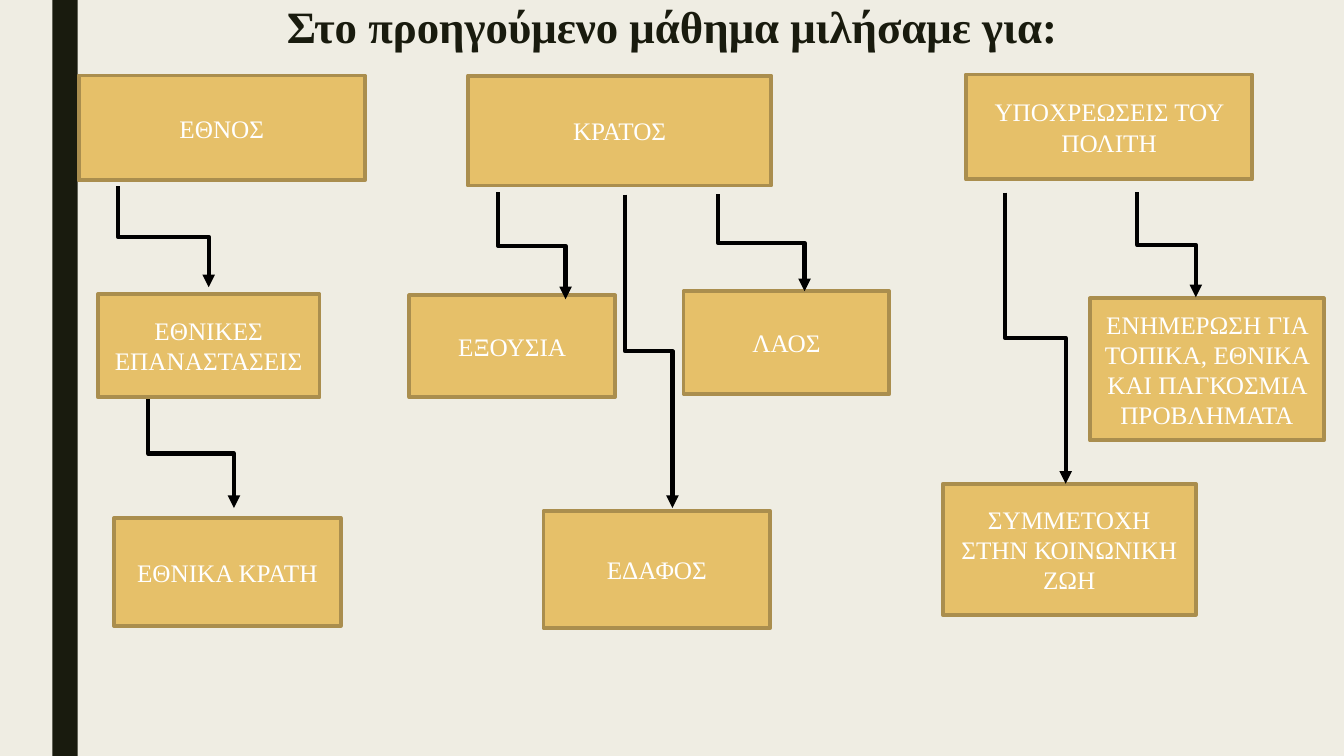
from lxml.etree import SubElement
from pptx import Presentation
from pptx.dml.color import RGBColor
from pptx.enum.shapes import MSO_CONNECTOR as Connector, MSO_SHAPE as Shape
from pptx.enum.text import MSO_ANCHOR as Anchor, PP_ALIGN as Align
from pptx.oxml.ns import qn
from pptx.util import Inches, Pt

COLORS = {
    "background": "EFEDE3",
    "dark": "191B0E",
    "gold": "E6C069",
    "border": "AA8E4E",
    "white": "FFFFFF",
    "black": "000000",
}
FONT = "Times New Roman"

TOPICS = [
    ("ΕΘΝΟΣ", 0.78, 0.75, 2.84, 1.04),
    ("ΕΘΝΙΚΕΣ ΕΠΑΝΑΣΤΑΣΕΙΣ", 0.97, 2.92, 2.2, 1.02),
    ("ΕΘΝΙΚΑ ΚΡΑΤΗ", 1.13, 5.14, 2.25, 1.07),
    ("ΚΡΑΤΟΣ", 4.64, 0.75, 3.01, 1.09),
    ("ΕΔΑΦΟΣ", 5.39, 5.07, 2.25, 1.16),
    ("ΛΑΟΣ", 6.78, 2.89, 2.04, 1.02),
    ("ΕΞΟΥΣΙΑ", 4.06, 2.93, 2.04, 1.01),
    ("ΥΠΟΧΡΕΩΣΕΙΣ ΤΟΥ ΠΟΛΙΤΗ", 9.58, 0.74, 2.84, 1.04),
    ("ΕΝΗΜΕΡΩΣΗ ΓΙΑ ΤΟΠΙΚΑ, ΕΘΝΙΚΑ ΚΑΙ ΠΑΓΚΟΣΜΙΑ ΠΡΟΒΛΗΜΑΤΑ", 10.81, 2.96, 2.32, 1.41),
    ("ΣΥΜΜΕΤΟΧΗ ΣΤΗΝ ΚΟΙΝΩΝΙΚΗ ΖΩΗ", 9.35, 4.8, 2.51, 1.3),
]

ARROWS = [
    (1.17, 1.85, 2.07, 2.85),
    (1.47, 3.96, 2.32, 5.04),
    (4.94, 1.91, 5.61, 2.97),
    (7.12, 1.93, 7.98, 2.89),
    (6.2, 1.93, 6.67, 5.04),
    (9.97, 1.91, 10.57, 4.8),
    (11.28, 1.91, 11.86, 2.95),
]


def color(name):
    return RGBColor.from_string(COLORS[name])


def write(box, text, size, color_name, anchor, bold=False):
    frame = box.text_frame
    frame.word_wrap = True
    frame.vertical_anchor = anchor
    para = frame.paragraphs[0]
    para.alignment = Align.CENTER
    span = para.add_run()
    span.text = text
    span.font.name = FONT
    span.font.size = Pt(size)
    span.font.bold = bold
    span.font.color.rgb = color(color_name)
    return para


def add_rectangle(page, left, top, width, height, fill):
    box = page.shapes.add_shape(
        Shape.RECTANGLE, Inches(left), Inches(top), Inches(width), Inches(height))
    box.shadow.inherit = False
    box.fill.solid()
    box.fill.fore_color.rgb = color(fill)
    box.line.fill.background()
    return box


def add_title(page, text):
    box = page.shapes.add_textbox(Inches(0.92), 0, Inches(11.5), Inches(0.74))
    para = write(box, text, 32, "dark", Anchor.TOP, bold=True)
    para.line_spacing = 0.89


def add_topic(page, text, left, top, width, height):
    box = add_rectangle(page, left, top, width, height, "gold")
    box.line.color.rgb = color("border")
    box.line.width = Pt(2.75)
    write(box, text, 18, "white", Anchor.MIDDLE)


def add_elbow_arrow(page, start_x, start_y, end_x, end_y):
    middle_x, middle_y = (start_x + end_x) / 2, (start_y + end_y) / 2
    half_run, half_drop = (end_x - start_x) / 2, (end_y - start_y) / 2
    arrow = page.shapes.add_connector(
        Connector.ELBOW,
        Inches(middle_x + half_drop), Inches(middle_y - half_run),
        Inches(middle_x - half_drop), Inches(middle_y + half_run))
    arrow.line.color.rgb = color("black")
    arrow.line.width = Pt(3)
    properties = arrow.element.spPr
    properties.find(qn("a:xfrm")).set("rot", str(270 * 60000))
    SubElement(properties.find(qn("a:ln")), qn("a:tailEnd"), type="triangle")
    SubElement(properties, qn("a:effectLst"))


def main():
    deck = Presentation()
    deck.slide_width, deck.slide_height = Inches(13.33), Inches(7.5)
    page = deck.slides.add_slide(deck.slide_layouts[6])
    page.background.fill.solid()
    page.background.fill.fore_color.rgb = color("background")
    add_rectangle(page, 0.52, 0, 0.25, 7.5, "dark")
    add_title(page, "Στο προηγούμενο μάθημα μιλήσαμε για:")
    for topic in TOPICS:
        add_topic(page, *topic)
    for arrow in ARROWS:
        add_elbow_arrow(page, *arrow)
    deck.save("out.pptx")


if __name__ == "__main__":
    main()
